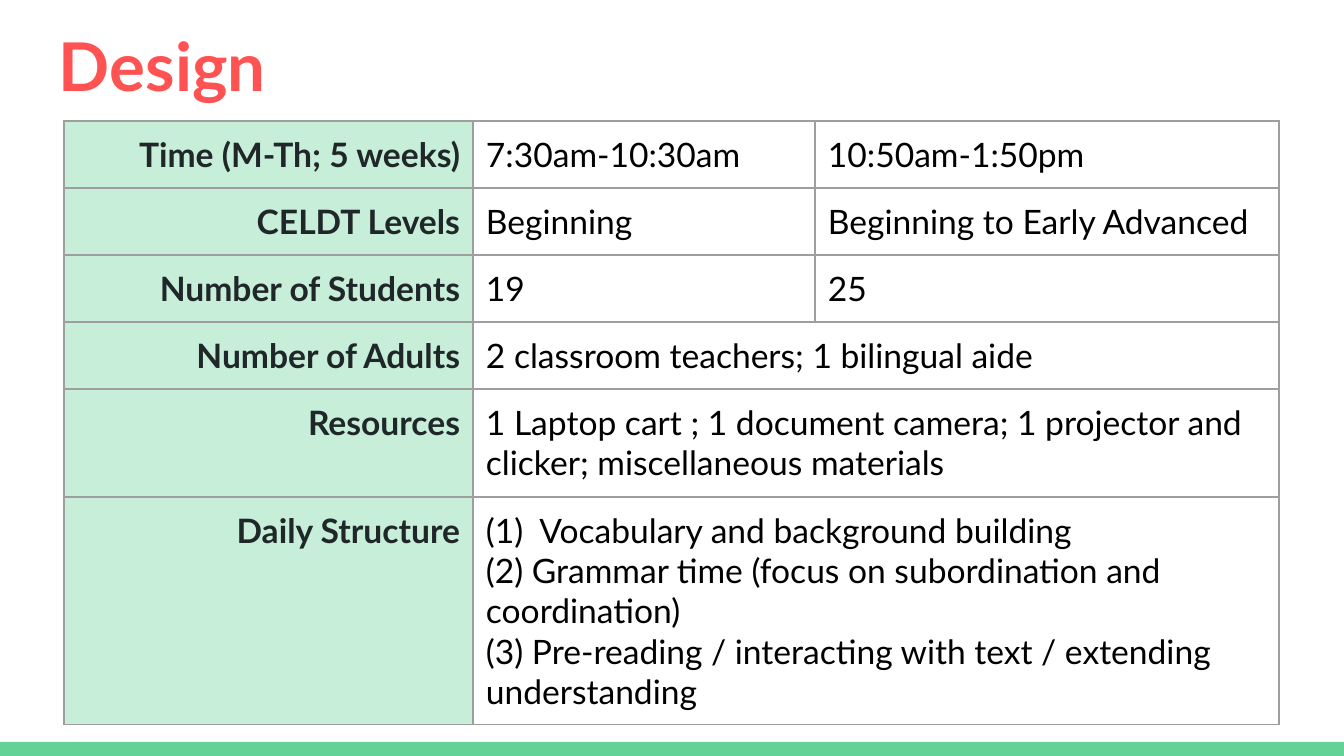
"""Build the Design slide: a title, a schedule table and a green foot bar."""
from lxml.etree import SubElement
from pptx import Presentation
from pptx.dml.color import RGBColor as RGB
from pptx.enum.shapes import MSO_SHAPE as SHAPE
from pptx.enum.text import MSO_ANCHOR as ANCHOR, PP_ALIGN as ALIGN
from pptx.oxml import parse_xml
from pptx.oxml.ns import nsdecls, qn
from pptx.util import Pt

SCALE = 914400 / 134.4
WIDE, HIGH, PAD = 1344, 756, 13
FONT = "Lato"
COLOR = {"title": "FF5252", "green": "63D297", "label": "202729",
         "text": "000000", "line": "9E9E9E"}
TITLE = "Design"
COLS = [409, 342, 464]
ROWS = [
    (67, "Time (M-Th; 5 weeks)", ["7:30am-10:30am", "10:50am-1:50pm"]),
    (67, "CELDT Levels", ["Beginning", "Beginning to Early Advanced"]),
    (67, "Number of Students", ["19", "25"]),
    (67, "Number of Adults", ["2 classroom teachers; 1 bilingual aide"]),
    (108, "Resources", ["1 Laptop cart ; 1 document camera; 1 projector and "
                        "clicker; miscellaneous materials"]),
    (228, "Daily Structure", [
        "(1)  Vocabulary and background building\n"
        "(2) Grammar time (focus on subordination and coordination)\n"
        "(3) Pre-reading / interacting with text / extending understanding"]),
]


def px(n):
    return round(n * SCALE)


def write(frame, text, size=18, color="text", bold=False, align=ALIGN.LEFT):
    frame.word_wrap = True
    frame.text = text
    for para in frame.paragraphs:
        para.alignment = align
        for run in para.runs:
            font = run.font
            font.name, font.size, font.bold = FONT, Pt(size), bold
            font.color.rgb = RGB.from_string(COLOR[color])


def inset(item):
    item.margin_left = item.margin_right = px(PAD)
    item.margin_top = item.margin_bottom = px(PAD)
    item.vertical_anchor = ANCHOR.TOP


def border(cell):
    props = cell._tc.get_or_add_tcPr()
    for i, side in enumerate("LRTB"):
        props.insert(i, parse_xml(
            f'<a:ln{side} {nsdecls("a")} w="{Pt(0.75)}"><a:solidFill>'
            f'<a:srgbClr val="{COLOR["line"]}"/></a:solidFill></a:ln{side}>'))


def tint(cell):
    cell.fill.solid()
    cell.fill.fore_color.rgb = RGB.from_string(COLOR["green"])
    tone = cell._tc.tcPr.find(".//" + qn("a:srgbClr"))
    SubElement(tone, qn("a:alpha"), val="36000")


def add_title(slide):
    title = slide.shapes.title
    title.left, title.top = px(46), px(11)
    title.width, title.height = px(1252), px(104)
    write(title.text_frame, TITLE, size=36, color="title", bold=True)
    inset(title.text_frame)


def add_bar(slide):
    bar = slide.shapes.add_shape(SHAPE.RECTANGLE, 0, px(HIGH - 14), px(WIDE), px(14))
    bar.shadow.inherit = False
    bar.fill.solid()
    bar.fill.fore_color.rgb = RGB.from_string(COLOR["green"])
    bar.line.fill.background()


def add_grid(slide):
    tall = sum(row[0] for row in ROWS)
    grid = slide.shapes.add_table(len(ROWS), len(COLS), px(64), px(121),
                                  px(sum(COLS)), px(tall)).table
    grid.first_row = grid.horz_banding = False
    for col, width in zip(grid.columns, COLS):
        col.width = px(width)
    for r, (height, label, texts) in enumerate(ROWS):
        grid.rows[r].height = px(height)
        for c in range(len(COLS)):
            cell = grid.cell(r, c)
            inset(cell)
            if c == 0:
                tint(cell)
                write(cell.text_frame, label, color="label", bold=True,
                      align=ALIGN.RIGHT)
            else:
                cell.fill.background()
                if c <= len(texts):
                    write(cell.text_frame, texts[c - 1])
            border(cell)
        if len(texts) == 1:
            grid.cell(r, 1).merge(grid.cell(r, 2))


def main():
    deck = Presentation()
    deck.slide_width, deck.slide_height = px(WIDE), px(HIGH)
    slide = deck.slides.add_slide(deck.slide_layouts[5])
    add_bar(slide)
    add_title(slide)
    add_grid(slide)
    deck.save("out.pptx")


if __name__ == "__main__":
    main()
